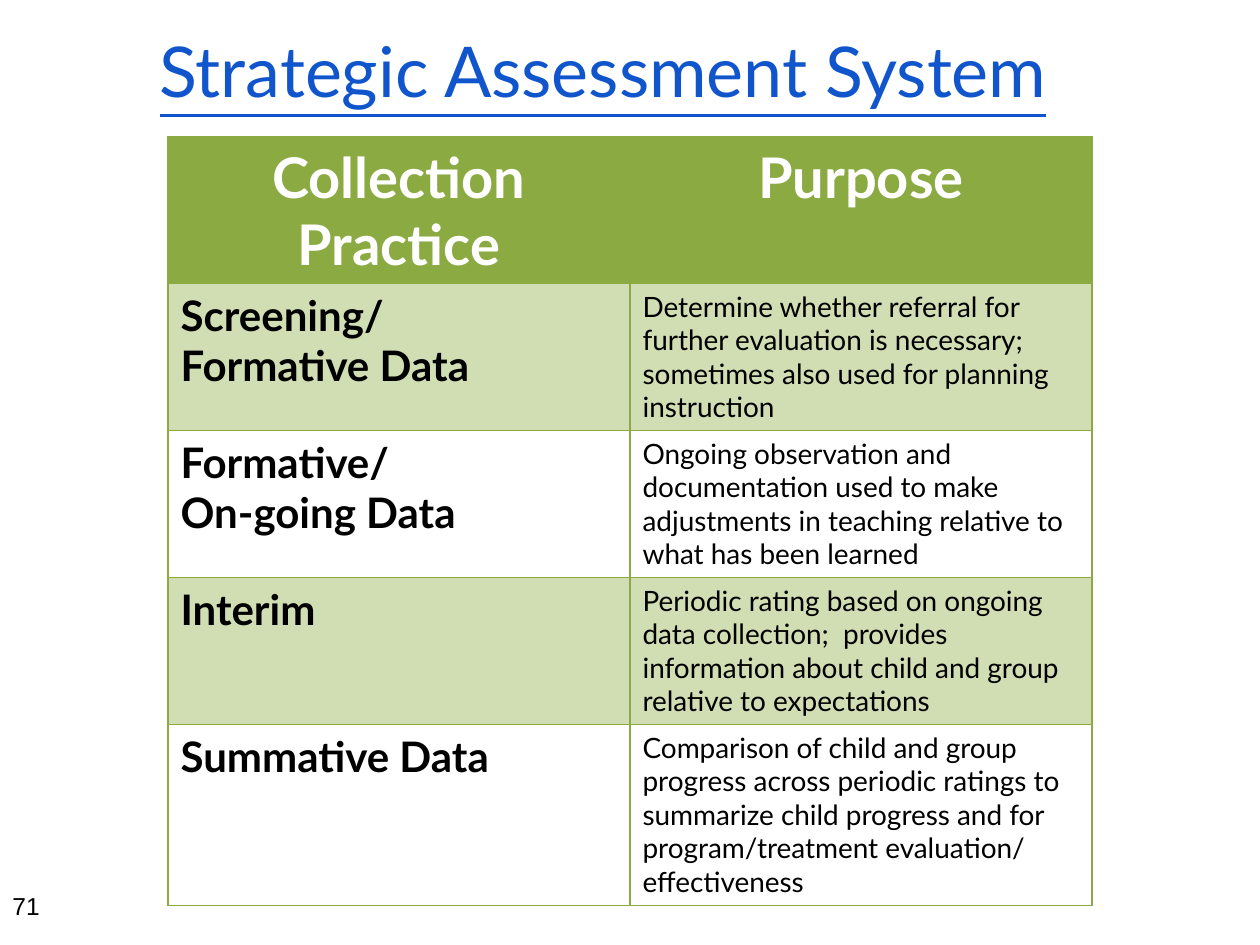
import pptx
import pptx.util
import pptx.dml.color
import pptx.enum.text
import pptx.oxml
import pptx.oxml.ns
from lxml import etree

Pt = pptx.util.Pt
ALIGN = pptx.enum.text.PP_ALIGN
TOP = pptx.enum.text.MSO_ANCHOR.TOP
COLORS = {"title": "1155CC", "green": "8BAB42", "band": "D1DDB3",
          "white": "FFFFFF", "black": "000000"}
HEADERS = ("Collection Practice", "Purpose")
PRACTICES = (
    ("Screening/\nFormative Data",
     "Determine whether referral for further evaluation is necessary; "
     "sometimes also used for planning instruction"),
    ("Formative/\nOn-going Data",
     "Ongoing observation and documentation used to make adjustments in "
     "teaching relative to what has been learned"),
    ("Interim",
     "Periodic rating based on ongoing data collection;  provides "
     "information about child and group relative to expectations"),
    ("Summative Data",
     "Comparison of child and group progress across periodic ratings to "
     "summarize child progress and for program/treatment evaluation/ "
     "effectiveness"),
)
ROW_HEIGHTS = (84, 83.5, 83.5, 83.5, 103)


def rgb(name):
    """Return the named colour."""
    return pptx.dml.color.RGBColor.from_string(COLORS[name])


def set_text(tf, text, size, color, font="Lato", bold=False, underline=False,
             align=ALIGN.LEFT):
    """Fill a text frame and format every run alike."""
    tf.text = text
    tf.word_wrap = True
    for p in tf.paragraphs:
        p.alignment = align
        for r in p.runs:
            r.font.name = font
            r.font.size = Pt(size)
            r.font.bold = bold
            r.font.underline = underline
            r.font.color.rgb = rgb(color)


def set_borders(cell, color, width):
    """Draw the four borders of a cell ahead of its fill."""
    tc_pr = cell._tc.get_or_add_tcPr()
    for i, side in enumerate(("lnL", "lnR", "lnT", "lnB")):
        ln = etree.Element(pptx.oxml.ns.qn("a:" + side), w=str(Pt(width)))
        fill = etree.SubElement(ln, pptx.oxml.ns.qn("a:solidFill"))
        etree.SubElement(fill, pptx.oxml.ns.qn("a:srgbClr"), val=COLORS[color])
        tc_pr.insert(i, ln)


def add_title(slide, left, top, width, height):
    """Place the underlined slide title."""
    sp = slide.shapes.title
    sp.left, sp.top, sp.width, sp.height = map(Pt, (left, top, width, height))
    tf = sp.text_frame
    set_text(tf, "Strategic Assessment System", 40, "title", underline=True)
    tf.vertical_anchor = TOP
    tf.auto_size = pptx.enum.text.MSO_AUTO_SIZE.NONE


def add_practice_table(slide, left, top, width):
    """Place the table of collection practices and their purposes."""
    rows = (HEADERS,) + PRACTICES
    frame = slide.shapes.add_table(len(rows), len(HEADERS), Pt(left), Pt(top),
                                   Pt(width), Pt(sum(ROW_HEIGHTS)))
    table = frame.table
    for column in table.columns:
        column.width = Pt(width / len(HEADERS))
    for i, texts in enumerate(rows):
        table.rows[i].height = Pt(ROW_HEIGHTS[i])
        for j, text in enumerate(texts):
            cell = table.cell(i, j)
            if i == 0:
                set_text(cell.text_frame, text, 32, "white", bold=True,
                         align=ALIGN.CENTER)
            else:
                set_text(cell.text_frame, text, 16 if j else 24, "black",
                         bold=j == 0)
            cell.fill.solid()
            cell.fill.fore_color.rgb = rgb(
                "green" if i == 0 else "band" if i % 2 else "white")
            set_borders(cell, "green", 0.75)


def add_page_number(slide, left, top, width, height):
    """Place the page number."""
    sp = slide.shapes.add_textbox(Pt(left), Pt(top), Pt(width), Pt(height))
    set_text(sp.text_frame, "71", 14, "black", font="Arial")


def main():
    """Build and save the slide."""
    prs = pptx.Presentation()
    prs.slide_width, prs.slide_height = Pt(720), Pt(540)
    slide = prs.slides.add_slide(prs.slide_layouts[5])
    add_title(slide, 84, 12, 552, 90)
    add_page_number(slide, 0, 505.5, 168, 29)
    add_practice_table(slide, 96, 78, 528)
    prs.save("out.pptx")


if __name__ == "__main__":
    main()
